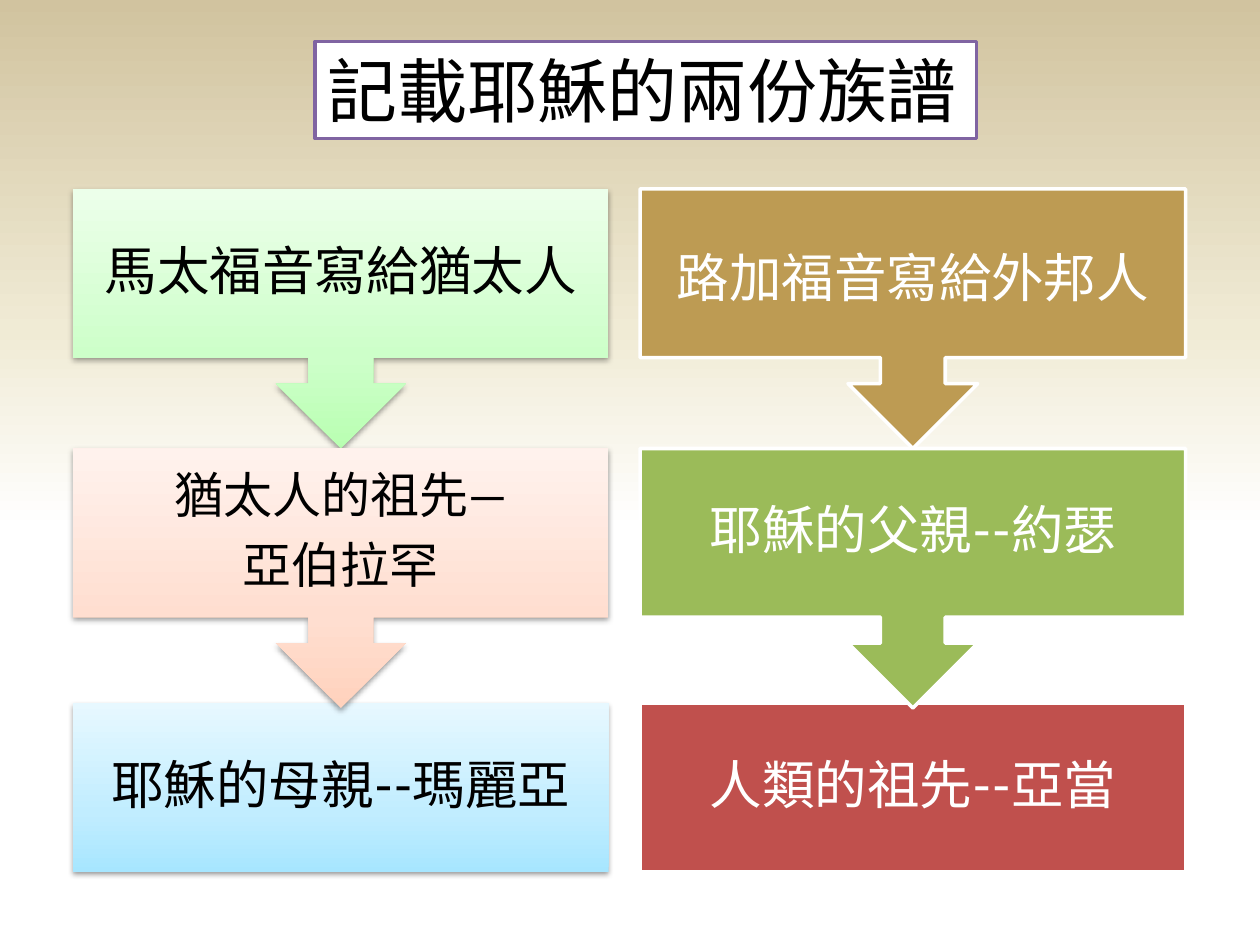
"""Build a slide that sets two genealogies of Jesus side by side."""
import pptx
import pptx.util
import pptx.dml.color
import pptx.enum.shapes
import pptx.enum.text
import pptx.oxml
import pptx.oxml.ns

Inches, Pt = pptx.util.Inches, pptx.util.Pt
RGB = pptx.dml.color.RGBColor
KIND = pptx.enum.shapes.MSO_SHAPE
ALIGN = pptx.enum.text.PP_ALIGN
ANCHOR = pptx.enum.text.MSO_ANCHOR
qn = pptx.oxml.ns.qn

FONT = "Lato"
BLACK, WHITE = RGB(0, 0, 0), RGB(255, 255, 255)
PURPLE = RGB(0x80, 0x64, 0xA2)
GOLD = RGB(0xBD, 0x9B, 0x53)
OLIVE = RGB(0x9B, 0xBB, 0x59)
RED = RGB(0xC0, 0x50, 0x4D)
SAND = [(44, WHITE), (65, RGB(0xF0, 0xEB, 0xD5)), (100, RGB(0xD1, 0xC3, 0x9F))]
GREEN = [(0, RGB(0xB9, 0xFF, 0xB2)), (35, RGB(0xCD, 0xFF, 0xC9)), (100, RGB(0xEC, 0xFF, 0xEA))]
PEACH = [(0, RGB(0xFF, 0xD2, 0xBD)), (35, RGB(0xFF, 0xDE, 0xD0)), (100, RGB(0xFF, 0xF2, 0xED))]
SKY = [(0, RGB(0xA7, 0xE6, 0xFF)), (35, RGB(0xC1, 0xED, 0xFF)), (100, RGB(0xE7, 0xF8, 0xFF))]

TITLE = "記載耶穌的兩份族譜"
FLOWS = [
    (0.58, 4.25, BLACK, [
        ("馬太福音寫給猶太人", 30, GREEN, 0),
        ("猶太人的祖先—\n亞伯拉罕", 28, PEACH, 0),
        ("耶穌的母親--瑪麗亞", 30, SKY, 0)]),
    (5.08, 4.33, WHITE, [
        ("路加福音寫給外邦人", 30, GOLD, 0.12),
        ("耶穌的父親--約瑟", 30, OLIVE, 0),
        ("人類的祖先--亞當", 30, RED, 0)]),
]
TOPS = (1.5, 3.56, 5.58)
CALL, BOX = 2.06, 1.34
ORDER = (2, 0, 1)


def node(tag, **attrs):
    item = pptx.oxml.parse_xml(f"<a:{tag} {pptx.oxml.ns.nsdecls('a')}/>")
    for key, value in attrs.items():
        item.set(key, str(value))
    return item


def blend(owner, fill, stops):
    fill.gradient()
    fill.gradient_angle = 90
    group = owner._element.find(".//" + qn("a:gsLst"))
    for old in list(group):
        group.remove(old)
    for place, color in stops:
        stop = node("gs", pos=place * 1000)
        stop.append(node("srgbClr", val=color))
        group.append(stop)


def shade(shape):
    glow = node("outerShdw", blurRad=Pt(3.1), dist=Pt(1.6), dir=5400000, rotWithShape=0)
    color = node("srgbClr", val=BLACK)
    color.append(node("alpha", val=38000))
    glow.append(color)
    shape._element.spPr.find(qn("a:effectLst")).append(glow)


def style(par, size, color):
    for run in par.runs:
        run.font.size, run.font.name = Pt(size), FONT
        run.font.color.rgb = color
        run.font._element.find(qn("a:latin")).addnext(node("ea", typeface=FONT))


def step(slide, left, wide, ink, row, item):
    text, size, paint, drop = item
    last = row == len(TOPS) - 1
    kind = KIND.RECTANGLE if last else KIND.DOWN_ARROW_CALLOUT
    shape = slide.shapes.add_shape(
        kind, Inches(left), Inches(TOPS[row]), Inches(wide), Inches(BOX if last else CALL))
    shape.shadow.inherit = False
    if isinstance(paint, list):
        blend(shape, shape.fill, paint)
        shape.line.fill.background()
        shade(shape)
    else:
        shape.fill.solid()
        shape.fill.fore_color.rgb = paint
        shape.line.color.rgb, shape.line.width = WHITE, Pt(2)
    frame = shape.text_frame
    frame.text, frame.word_wrap = text, True
    frame.vertical_anchor = ANCHOR.MIDDLE
    pad = Inches(0.23 if size == 30 else 0.22)
    frame.margin_left = frame.margin_right = frame.margin_bottom = pad
    frame.margin_top = pad + Inches(drop)
    for par in frame.paragraphs:
        par.alignment, par.line_spacing = ALIGN.CENTER, 0.9
        par.space_after = Pt(size * 0.35)
        style(par, size, ink)


def head(slide):
    title = slide.shapes.title
    title.left, title.top = Inches(2.5), Inches(0.33)
    title.width, title.height = Inches(5.25), Inches(0.77)
    title.fill.solid()
    title.fill.fore_color.rgb = WHITE
    title.line.color.rgb, title.line.width = PURPLE, Pt(2)
    frame = title.text_frame
    frame.text, frame.word_wrap = TITLE, False
    frame.auto_size = pptx.enum.text.MSO_AUTO_SIZE.NONE
    frame.vertical_anchor = ANCHOR.TOP
    frame.paragraphs[0].alignment = ALIGN.LEFT
    style(frame.paragraphs[0], 40, BLACK)


def main():
    deck = pptx.Presentation()
    deck.slide_width, deck.slide_height = Inches(10), Inches(7.5)
    slide = deck.slides.add_slide(deck.slide_layouts[5])
    blend(slide, slide.background.fill, SAND)
    for left, wide, ink, items in FLOWS:
        for row in ORDER:
            step(slide, left, wide, ink, row, items[row])
    head(slide)
    deck.save("out.pptx")


if __name__ == "__main__":
    main()
